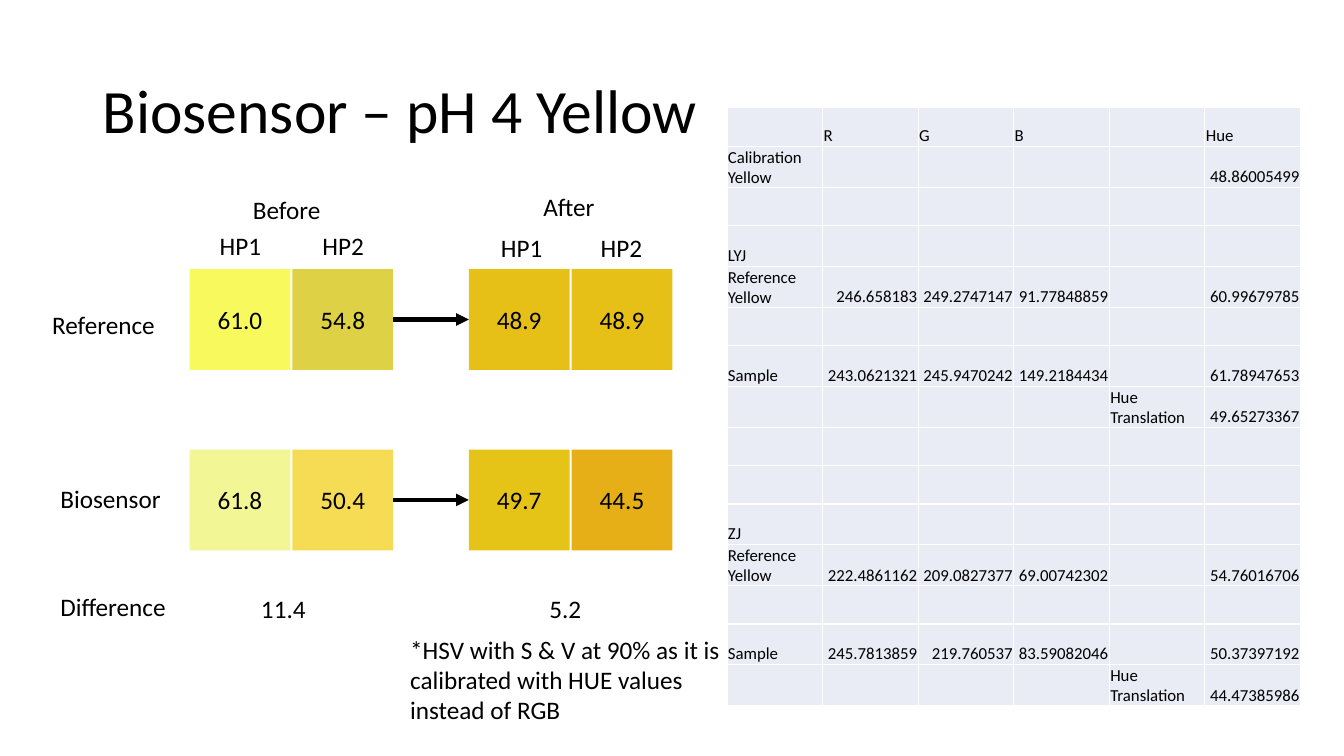
from lxml.etree import SubElement
from pptx import Presentation
from pptx.dml.color import RGBColor
from pptx.enum.shapes import MSO_CONNECTOR, MSO_SHAPE
from pptx.enum.text import MSO_ANCHOR, MSO_AUTO_SIZE, PP_ALIGN
from pptx.oxml.ns import qn
from pptx.util import Inches, Pt

BLACK = RGBColor(0, 0, 0)
WHITE = RGBColor(255, 255, 255)
CELL_FILL = RGBColor(0xE9, 0xEB, 0xF5)

TITLE = "Biosensor – pH 4 Yellow"
NOTE = "*HSV with S & V at 90% as it is calibrated with HUE values instead of RGB"

# text, left, top, width
LABELS = [
    ("Before", 2.41, 1.88, 0.88), ("After", 5.29, 1.85, 0.72),
    ("HP1", 2.08, 2.24, 0.62), ("HP2", 3.1, 2.24, 0.62),
    ("HP1", 4.87, 2.26, 0.62), ("HP2", 5.86, 2.26, 0.62),
    ("Reference", 0.42, 3.02, 1.23), ("Biosensor", 0.5, 4.75, 1.21),
    ("Difference", 0.5, 5.82, 1.26), ("11.4", 2.49, 5.84, 0.65),
    ("5.2", 5.35, 5.84, 0.52),
]

# top of the row, then hue and colour of HP1, HP2 before and HP1, HP2 after
SWATCH_ROWS = [
    (2.67, [("61.0", "F7F95C"), ("54.8", "DED145"),
            ("48.9", "E6C017"), ("48.9", "E6C017")]),
    (4.46, [("61.8", "F3F695"), ("50.4", "F6DC54"),
            ("49.7", "E6C317"), ("44.5", "E6AF17")]),
]
SWATCH_LEFTS = [1.88, 2.9, 4.65, 5.67]
SWATCH_SIZE = 1

EMPTY = [""] * 6
HUE_TABLE = [
    ["", "R", "G", "B", "", "Hue"],
    ["Calibration Yellow", "", "", "", "", "48.86005499"],
    EMPTY,
    ["LYJ", "", "", "", "", ""],
    ["Reference Yellow", "246.658183", "249.2747147", "91.77848859", "", "60.99679785"],
    EMPTY,
    ["Sample", "243.0621321", "245.9470242", "149.2184434", "", "61.78947653"],
    ["", "", "", "", "Hue Translation", "49.65273367"],
    EMPTY,
    EMPTY,
    ["ZJ", "", "", "", "", ""],
    ["Reference Yellow", "222.4861162", "209.0827377", "69.00742302", "", "54.76016706"],
    EMPTY,
    ["Sample", "245.7813859", "219.760537", "83.59082046", "", "50.37397192"],
    ["", "", "", "", "Hue Translation", "44.47385986"],
]
TABLE_LEFT, TABLE_TOP, TABLE_WIDTH, TABLE_HEIGHT = 7.21, 1.07, 5.69, 5.95
LABELLED_ROW, PLAIN_ROW = 0.4, 0.38


def apply(target, formats):
    for name, value in formats.items():
        setattr(target, name, value)


def write(frame, text, size, align=PP_ALIGN.LEFT):
    para = frame.paragraphs[0]
    para.alignment = align
    span = para.add_run()
    span.text = text
    apply(span.font, {"name": "Calibri", "size": Pt(size)})
    span.font.color.rgb = BLACK
    return para


def add_label(page, text, left, top, width, height=0.4, wrap=False):
    box = page.shapes.add_textbox(*map(Inches, (left, top, width, height)))
    apply(box.text_frame, {"word_wrap": wrap,
                           "auto_size": MSO_AUTO_SIZE.SHAPE_TO_FIT_TEXT})
    write(box.text_frame, text, 18)


def add_swatch(page, hue, color, left, top):
    box = page.shapes.add_shape(
        MSO_SHAPE.RECTANGLE, *map(Inches, (left, top, SWATCH_SIZE, SWATCH_SIZE)))
    box.shadow.inherit = False
    box.fill.solid()
    box.fill.fore_color.rgb = RGBColor.from_string(color)
    box.line.fill.background()
    box.text_frame.vertical_anchor = MSO_ANCHOR.MIDDLE
    write(box.text_frame, hue, 18, PP_ALIGN.CENTER)


def add_arrow(page, start, end, y):
    arrow = page.shapes.add_connector(
        MSO_CONNECTOR.STRAIGHT, *map(Inches, (start, y, end, y)))
    arrow.line.width = Pt(3)
    arrow.line.color.rgb = BLACK
    SubElement(arrow.line._get_or_add_ln(), qn("a:tailEnd"), type="triangle")
    SubElement(arrow._element.spPr, qn("a:effectLst"))


def format_cell(cell, text):
    apply(cell, {"margin_left": Inches(0.01), "margin_right": Inches(0.01),
                 "margin_top": Inches(0.01), "margin_bottom": 0,
                 "vertical_anchor": MSO_ANCHOR.BOTTOM})
    properties = cell._tc.get_or_add_tcPr()
    for side in ("lnL", "lnR", "lnT", "lnB"):
        border = SubElement(properties, qn(f"a:{side}"), w=str(Pt(1)))
        SubElement(SubElement(border, qn("a:solidFill")), qn("a:srgbClr"), val=str(WHITE))
    cell.fill.solid()
    cell.fill.fore_color.rgb = CELL_FILL
    if text:
        numeric = text[0].isdigit()
        write(cell.text_frame, text, 12, PP_ALIGN.RIGHT if numeric else PP_ALIGN.LEFT)


def add_hue_table(page):
    columns = len(HUE_TABLE[0])
    table = page.shapes.add_table(
        len(HUE_TABLE), columns,
        *map(Inches, (TABLE_LEFT, TABLE_TOP, TABLE_WIDTH, TABLE_HEIGHT))).table
    apply(table, {"first_row": False, "horz_banding": False})
    for column in table.columns:
        column.width = Inches(TABLE_WIDTH / columns)
    for row, texts in zip(table.rows, HUE_TABLE):
        labelled = texts[0] or texts[4]
        row.height = Inches(LABELLED_ROW if labelled else PLAIN_ROW)
        for cell, text in zip(row.cells, texts):
            format_cell(cell, text)


def main():
    deck = Presentation()
    apply(deck, {"slide_width": Inches(13.33), "slide_height": Inches(7.5)})
    page = deck.slides.add_slide(deck.slide_layouts.get_by_name("Title Only"))

    title = page.shapes.title
    apply(title, {"left": Inches(0.92), "top": Inches(0.4),
                  "width": Inches(11.5), "height": Inches(1.45)})
    title.text_frame.vertical_anchor = MSO_ANCHOR.MIDDLE
    write(title.text_frame, TITLE, 44).line_spacing = 0.9

    for top, swatches in SWATCH_ROWS:
        for left, (hue, color) in zip(SWATCH_LEFTS, swatches):
            add_swatch(page, hue, color, left, top)
        add_arrow(page, SWATCH_LEFTS[1] + SWATCH_SIZE, SWATCH_LEFTS[2],
                  top + SWATCH_SIZE / 2)
    for label in LABELS:
        add_label(page, *label)
    add_label(page, NOTE, 3.97, 6.24, 3.36, 1.01, wrap=True)
    add_hue_table(page)
    deck.save("out.pptx")


if __name__ == "__main__":
    main()
